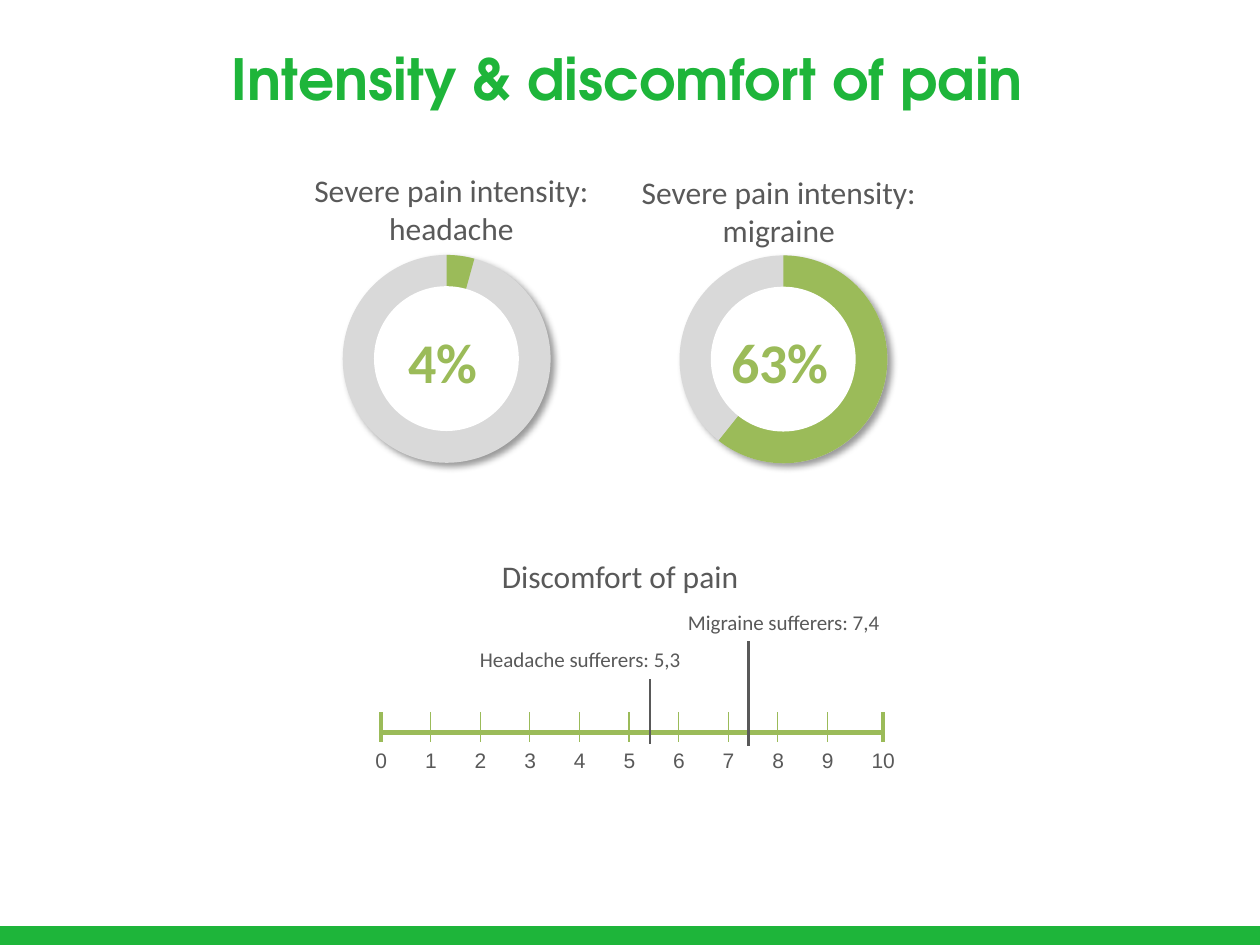
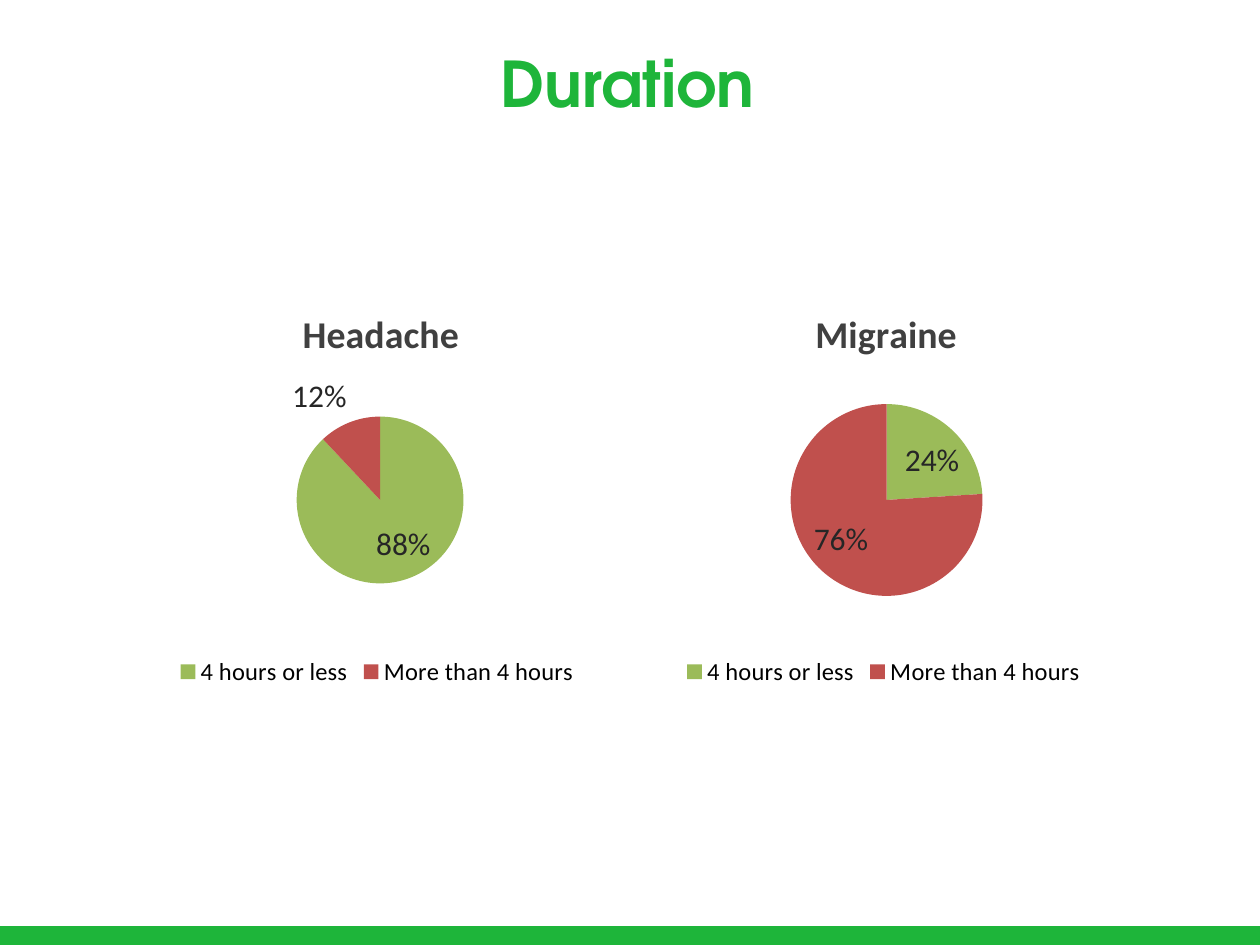
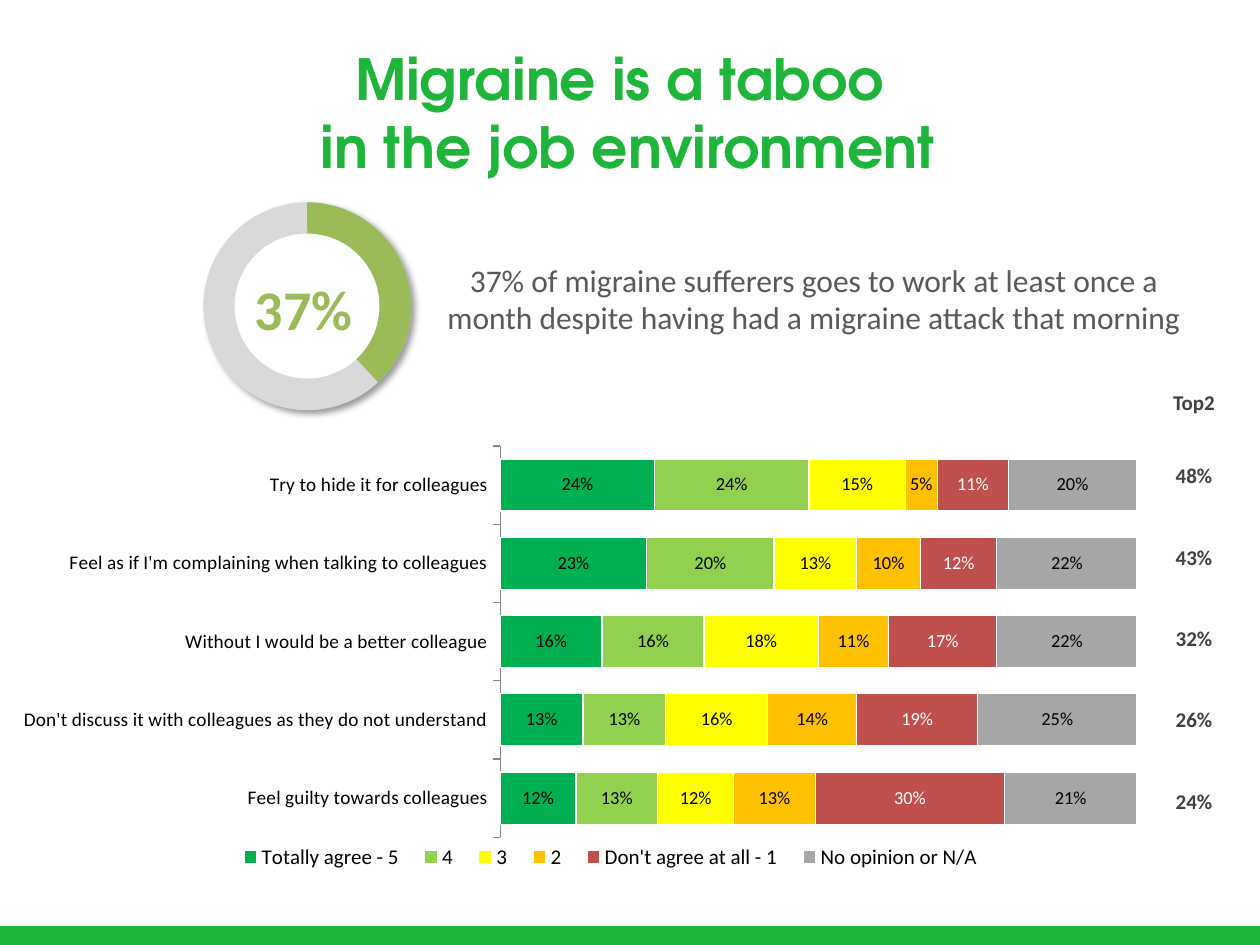
from lxml.etree import SubElement
from pptx import Presentation
from pptx.chart.data import CategoryChartData
from pptx.dml.color import RGBColor
from pptx.enum.chart import XL_CHART_TYPE, XL_LEGEND_POSITION, XL_TICK_MARK
from pptx.enum.shapes import MSO_CONNECTOR, MSO_SHAPE
from pptx.enum.text import MSO_ANCHOR, MSO_AUTO_SIZE, PP_ALIGN
from pptx.oxml.ns import qn
from pptx.util import Cm, Pt

COLORS = {
    "brand": "1EB53A", "accent": "9BBB59", "ring": "D9D9D9", "white": "FFFFFF",
    "black": "000000", "text": "595959", "heading": "404040", "pie_label": "262626",
    "red": "C0504D", "axis": "868686", "agree_5": "00B050", "agree_4": "92D050",
    "agree_3": "FFFF00", "agree_2": "FFC000", "no_opinion": "A6A6A6",
}
TITLE_FONT, BODY_FONT, SCALE_FONT = "TeX Gyre Adventor", "Calibri", "Arial"


def rgb(name):
    return RGBColor.from_string(COLORS[name])


def place_chart_part(part, index, inner=False, **frame):
    """Give a chart part a manual layout, as fractions of the chart."""
    for old in part.findall(qn("c:layout")):
        part.remove(old)
    layout = SubElement(part, qn("c:layout"))
    part.insert(index, layout)
    manual = SubElement(layout, qn("c:manualLayout"))
    settings = {"layoutTarget": "inner"} if inner else {}
    settings |= {"xMode": "edge", "yMode": "edge"} | frame
    for tag, value in settings.items():
        SubElement(manual, qn(f"c:{tag}")).set("val", str(value))


class Deck:
    def __init__(self):
        self.prs = Presentation()
        self.prs.slide_width, self.prs.slide_height = Cm(25.4), Cm(19.05)
        self.slide = None

    def add_slide(self, title_lines, size=32.4):
        first = self.slide is None
        self.slide = self.prs.slides.add_slide(self.prs.slide_layouts[5])
        if first:
            self.footer_band()
        title = self.slide.shapes.title
        title.left, title.top, title.width, title.height = Cm(3.6), Cm(0.76), Cm(18.1), Cm(3.18)
        frame = title.text_frame
        frame.auto_size, frame.vertical_anchor = MSO_AUTO_SIZE.NONE, MSO_ANCHOR.TOP
        self.add_lines(frame, title_lines, size, "brand", True, TITLE_FONT)

    def footer_band(self):
        """Draw the band once and hand it to the slide master."""
        band = self.shape(MSO_SHAPE.RECTANGLE, -0.1, 18.67, 25.6, 0.46, "brand")
        band.element.nvSpPr.cNvPr.set("id", "20")
        self.prs.slide_master.shapes.element.append(band.element)

    def style(self, font, size, color, bold=False, name=BODY_FONT):
        font.name, font.size, font.bold = name, Pt(size), bold
        font.color.rgb = rgb(color)

    def add_lines(self, frame, lines, size, color, bold=False, font=BODY_FONT,
                  align=PP_ALIGN.CENTER):
        paragraph = frame.paragraphs[0]
        paragraph.alignment = align
        for number, line in enumerate(lines):
            if number:
                paragraph.add_line_break()
            run = paragraph.add_run()
            run.text = line
            self.style(run.font, size, color, bold, font)

    def text(self, lines, left, top, width, height, size=18, color="text", bold=False,
             font=BODY_FONT, align=PP_ALIGN.CENTER, inset=True, parent=None):
        box = (parent or self.slide).shapes.add_textbox(Cm(left), Cm(top), Cm(width), Cm(height))
        frame = box.text_frame
        frame.word_wrap = True
        if not inset:
            frame.margin_left = frame.margin_right = frame.margin_top = frame.margin_bottom = 0
        self.add_lines(frame, lines, size, color, bold, font, align)

    def shape(self, preset, left, top, width, height, fill, parent=None):
        shape = (parent or self.slide).shapes.add_shape(
            preset, Cm(left), Cm(top), Cm(width), Cm(height))
        shape.shadow.inherit = False
        shape.fill.solid()
        shape.fill.fore_color.rgb = rgb(fill)
        shape.line.fill.background()
        return shape

    def line(self, x1, y1, x2, y2, color, width):
        line = self.slide.shapes.add_connector(
            MSO_CONNECTOR.STRAIGHT, Cm(x1), Cm(y1), Cm(x2), Cm(y2))
        line.line.color.rgb, line.line.width = rgb(color), Pt(width)
        SubElement(line.element.spPr, qn("a:effectLst"))

    def gauge(self, label, sweep, left, top):
        """Ring with an arc of sweep degrees from twelve o'clock."""
        size, thickness = 4.19, 0.172
        group = self.slide.shapes.add_group_shape()
        ring = self.shape(MSO_SHAPE.DONUT, left, top, size, size, "ring", group)
        ring.adjustments[0] = thickness
        effects = ring.element.spPr.find(qn("a:effectLst"))
        shadow = SubElement(effects, qn("a:outerShdw"), blurRad=str(Pt(4)), dist=str(Pt(3)),
                            dir="2700000", algn="tl", rotWithShape="0")
        tint = SubElement(shadow, qn("a:srgbClr"), val=COLORS["black"])
        SubElement(tint, qn("a:alpha"), val="40000")
        arc = self.shape(MSO_SHAPE.BLOCK_ARC, left, top, size, size, "accent", group)
        # One degree is 60000 units; adjustments count in 100000
        arc.adjustments[0] = 270 * 0.6
        arc.adjustments[1] = (270 + sweep) % 360 * 0.6
        arc.adjustments[2] = thickness
        self.shape(MSO_SHAPE.OVAL, left + 0.63, top + 0.63, 2.92, 2.92, "white", group)
        self.text([label], left + 0.77, top + 1.46, 2.51, 1.35, 32, "accent", True,
                  inset=False, parent=group)

    def chart(self, kind, categories, series, left, top, width, height, legend_size):
        data = CategoryChartData(number_format="0%")
        data.categories = categories
        for name, values in series:
            data.add_series(name, values)
        chart = self.slide.shapes.add_chart(
            kind, Cm(left), Cm(top), Cm(width), Cm(height), data).chart
        self.style(chart.font, 18, "black")
        chart.has_legend = True
        chart.legend.position = XL_LEGEND_POSITION.BOTTOM
        chart.legend.include_in_layout = False
        self.style(chart.legend.font, legend_size, "black")
        return chart

    def value_labels(self, labels, size, color):
        labels.show_value = True
        labels.number_format, labels.number_format_is_linked = "0%", False
        self.style(labels.font, size, color)

    def pie(self, name, values, left, title_x, plot):
        chart = self.chart(XL_CHART_TYPE.PIE, ["4 hours or less", "More than 4 hours"],
                           [(name, values)], left, 5.54, 12.6, 8.41, 14)
        chart.has_title = True
        self.add_lines(chart.chart_title.text_frame, [name], 21.6, "heading", True)
        place_chart_part(chart.element.find(".//" + qn("c:title")), 1, x=title_x, y=0.06)
        place_chart_part(chart.element.find(".//" + qn("c:plotArea")), 0, True, **plot)
        pie = chart.plots[0]
        pie.vary_by_categories = True
        for index, color in enumerate(("accent", "red")):
            fill = pie.series[0].points[index].format.fill
            fill.solid()
            fill.fore_color.rgb = rgb(color)
        pie.has_data_labels = True
        self.value_labels(pie.data_labels, 18, "pie_label")

    def stacked_bars(self, categories, answers, left, top, width, height):
        chart = self.chart(XL_CHART_TYPE.BAR_STACKED_100, categories,
                           [(name, values) for name, values, *_ in answers],
                           left, top, width, height, 12)
        chart.has_title = False
        place_chart_part(chart.element.find(".//" + qn("c:plotArea")), 0, True,
                         x=0.422, y=0.028, w=0.537, h=0.883)
        place_chart_part(chart.element.find(".//" + qn("c:legend")), 1,
                         x=0.19, y=0.92, w=0.65, h=0.07)
        bars = chart.plots[0]
        bars.gap_width, bars.overlap, bars.vary_by_categories = 50, 100, False
        for series, (_, _, color, label_color) in zip(bars.series, answers):
            series.format.fill.solid()
            series.format.fill.fore_color.rgb = rgb(color)
            series.format.line.color.rgb, series.format.line.width = rgb("white"), Pt(0.75)
            self.value_labels(series.data_labels, 10.5, label_color)
        axis = chart.category_axis
        axis.reverse_order, axis.major_tick_mark = True, XL_TICK_MARK.OUTSIDE
        axis.format.line.color.rgb = rgb("axis")
        self.style(axis.tick_labels.font, 11, "black")
        scale = chart.value_axis
        scale.visible = scale.has_major_gridlines = False
        scale.minimum_scale, scale.maximum_scale, scale.major_unit = 0, 1, 0.1

    def column_table(self, texts, left, top, width, head_height, row_height):
        height = head_height + row_height * (len(texts) - 1)
        table = self.slide.shapes.add_table(
            len(texts), 1, Cm(left), Cm(top), Cm(width), Cm(height)).table
        table.first_row = table.horz_banding = False
        for index, text in enumerate(texts):
            table.rows[index].height = Cm(row_height if index else head_height)
            cell = table.cell(index, 0)
            cell.fill.background()
            cell.margin_left = cell.margin_right = cell.margin_top = Cm(0.03)
            cell.margin_bottom = 0
            cell.vertical_anchor = MSO_ANCHOR.TOP if index else MSO_ANCHOR.MIDDLE
            self.add_lines(cell.text_frame, [text], 12, "heading", True)


def intensity_slide(deck):
    deck.add_slide(["Intensity & discomfort of pain"])
    deck.gauge("4%", 15.5, 6.91, 5.14)
    deck.gauge("63%", 218.6, 13.7, 5.15)
    deck.text(["Severe pain intensity: headache"], 5.9, 3.33, 6.4, 1.8)
    deck.text(["Severe pain intensity:", "migraine"], 12.5, 3.36, 6.4, 1.8)

    # Scale from 0 to 10
    start, end = 7.68, 17.8
    deck.line(start, 14.76, end, 14.76, "accent", 3)
    for value in range(11):
        tick = end if value == 10 else start + value
        deck.line(tick, 14.36, tick, 14.96, "accent", 2.25 if value in (0, 10) else 0.75)
        deck.text([str(value)], 7.32 + value, 14.95, 1, 0.76, 12,
                  font=SCALE_FONT, align=PP_ALIGN.LEFT)

    # Scores on the scale
    deck.text(["Discomfort of pain"], 9.3, 11.1, 6.4, 1.02)
    deck.text(["Headache sufferers: 5,3"], 8.5, 12.9, 6.4, 0.76, 12)
    deck.text(["Migraine sufferers: 7,4"], 12.6, 12.17, 6.4, 0.76, 12)
    deck.line(13.1, 13.69, 13.1, 14.99, "text", 1.5)
    deck.line(15.09, 12.93, 15.09, 15.04, "text", 1.5)


def duration_slide(deck):
    deck.add_slide(["Duration"], 36)
    deck.pie("Headache", [0.88, 0.12], 1.3, 0.37, {"x": 0.37, "y": 0.34, "w": 0.27, "h": 0.4})
    deck.pie("Migraine", [0.24, 0.76], 11.51, 0.38, {"x": 0.35, "y": 0.31, "w": 0.31, "h": 0.46})


def taboo_slide(deck):
    deck.add_slide(["Migraine is a taboo ", "in the job environment"])
    statements = [
        "Try to hide it for colleagues",
        "Feel as if I'm complaining when talking to colleagues",
        "Without I would be a better colleague",
        "Don't discuss it with colleagues as they do not understand",
        "Feel guilty towards colleagues",
    ]
    answers = [
        ("Totally agree - 5", [0.24, 0.23, 0.16, 0.13, 0.12], "agree_5", "black"),
        ("4", [0.24, 0.2, 0.16, 0.13, 0.13], "agree_4", "black"),
        ("3", [0.15, 0.13, 0.18, 0.16, 0.12], "agree_3", "black"),
        ("2", [0.05, 0.1, 0.11, 0.14, 0.13], "agree_2", "black"),
        ("Don't agree at all - 1", [0.11, 0.12, 0.17, 0.19, 0.3], "red", "white"),
        ("No opinion or N/A", [0.2, 0.22, 0.22, 0.25, 0.21], "no_opinion", "black"),
    ]
    deck.stacked_bars(statements, answers, 0, 8.74, 23.9, 8.94)
    deck.column_table(["Top2", "48%", "43%", "32%", "26%", "24%"], 23.5, 6.91, 1.14, 2.41, 1.64)
    deck.gauge("37%", 137, 4.1, 4.08)
    deck.text(["37% of migraine sufferers goes to work at least once a month "
               "despite having had a migraine attack that morning"], 8.31, 5.13, 16.2, 1.8)


def main():
    deck = Deck()
    intensity_slide(deck)
    duration_slide(deck)
    taboo_slide(deck)
    deck.prs.save("out.pptx")


if __name__ == "__main__":
    main()
